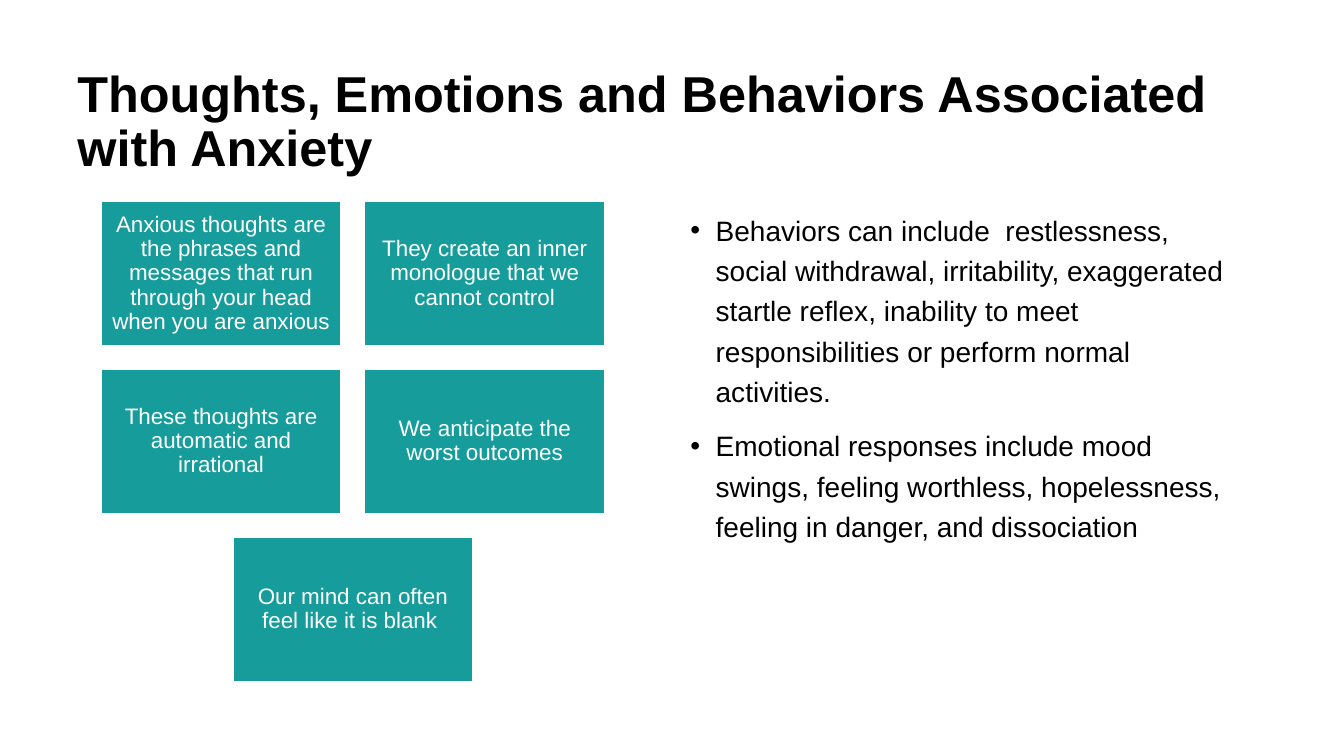
from pptx import Presentation
from pptx import util as u
from pptx.dml import color
from pptx.enum import shapes, text
from pptx.oxml import ns
from lxml import etree


def rgb(value):
    return color.RGBColor.from_string(value)


class SlideBuilder:
    """Holds the style and the current slide, and adds each kind of element."""

    font = "Arial"
    ink = "000000"
    teal = "169C9A"
    white = "FFFFFF"

    def __init__(self, slide):
        self.slide = slide

    def style(self, paragraph, size, ink, spacing, bold=False):
        paragraph.font.name = self.font
        paragraph.font.size = u.Pt(size)
        paragraph.font.bold = bold
        paragraph.font.color.rgb = rgb(ink)
        paragraph.line_spacing = spacing

    def text_frame(self, left, top, width, height):
        box = self.slide.shapes.add_textbox(*map(u.Inches, (left, top, width, height)))
        box.text_frame.word_wrap = True
        return box.text_frame

    def title(self, words, *place):
        frame = self.text_frame(*place)
        frame.vertical_anchor = text.MSO_ANCHOR.MIDDLE
        frame.text = words
        self.style(frame.paragraphs[0], 36, self.ink, 0.9, bold=True)

    def card(self, words, *place):
        shape = self.slide.shapes.add_shape(
            shapes.MSO_SHAPE.RECTANGLE, *map(u.Inches, place))
        shape.shadow.inherit = False
        shape.fill.solid()
        shape.fill.fore_color.rgb = rgb(self.teal)
        shape.line.color.rgb = rgb(self.white)
        shape.line.width = u.Pt(1)
        frame = shape.text_frame
        frame.word_wrap = True
        frame.vertical_anchor = text.MSO_ANCHOR.MIDDLE
        frame.margin_left = frame.margin_right = u.Inches(0.07)
        frame.margin_top = frame.margin_bottom = u.Inches(0.07)
        frame.text = words
        paragraph = frame.paragraphs[0]
        paragraph.alignment = text.PP_ALIGN.CENTER
        self.style(paragraph, 16, self.white, 0.9)

    def bullets(self, items, *place):
        frame = self.text_frame(*place)
        frame.text = "\n".join(items)
        for paragraph in frame.paragraphs:
            self.style(paragraph, 20, self.ink, 1.2)
            paragraph.space_before = u.Pt(10)
            properties = paragraph._p.get_or_add_pPr()
            properties.set("marL", str(u.Inches(0.25)))
            properties.set("indent", str(-u.Inches(0.25)))
            bullet_font = etree.Element(ns.qn("a:buFont"), typeface=self.font)
            bullet = etree.Element(ns.qn("a:buChar"), char="•")
            properties.insert_element_before(bullet_font, "a:tabLst", "a:defRPr")
            properties.insert_element_before(bullet, "a:tabLst", "a:defRPr")


THOUGHTS = [
    "Anxious thoughts are the phrases and messages that run through your head when you are anxious",
    "They create an inner monologue that we cannot control",
    "These thoughts are automatic and irrational",
    "We anticipate the worst outcomes",
    "Our mind can often feel like it is blank ",
]
RESPONSES = [
    "Behaviors can include  restlessness, social withdrawal, irritability, exaggerated "
    "startle reflex, inability to meet responsibilities or perform normal activities.",
    "Emotional responses include mood swings, feeling worthless, hopelessness, "
    "feeling in danger, and dissociation",
]
CARD_WIDTH, CARD_HEIGHT, GAP = 2.38, 1.43, 0.235
COLUMNS, GRID_CENTER, GRID_TOP = 2, 3.5, 2


def main():
    presentation = Presentation()
    presentation.slide_width = u.Inches(13.33)
    presentation.slide_height = u.Inches(7.5)
    builder = SlideBuilder(presentation.slides.add_slide(presentation.slide_layouts[6]))
    builder.title("Thoughts, Emotions and Behaviors Associated with Anxiety",
                  0.67, 0.6, 11.75, 1.24)
    for start in range(0, len(THOUGHTS), COLUMNS):
        row = THOUGHTS[start:start + COLUMNS]
        left = GRID_CENTER - (len(row) * (CARD_WIDTH + GAP) - GAP) / 2
        top = GRID_TOP + start // COLUMNS * (CARD_HEIGHT + GAP)
        for column, words in enumerate(row):
            builder.card(words, left + column * (CARD_WIDTH + GAP), top,
                         CARD_WIDTH, CARD_HEIGHT)
    builder.bullets(RESPONSES, 6.75, 2, 5.67, 4.76)
    presentation.save("out.pptx")


if __name__ == "__main__":
    main()
